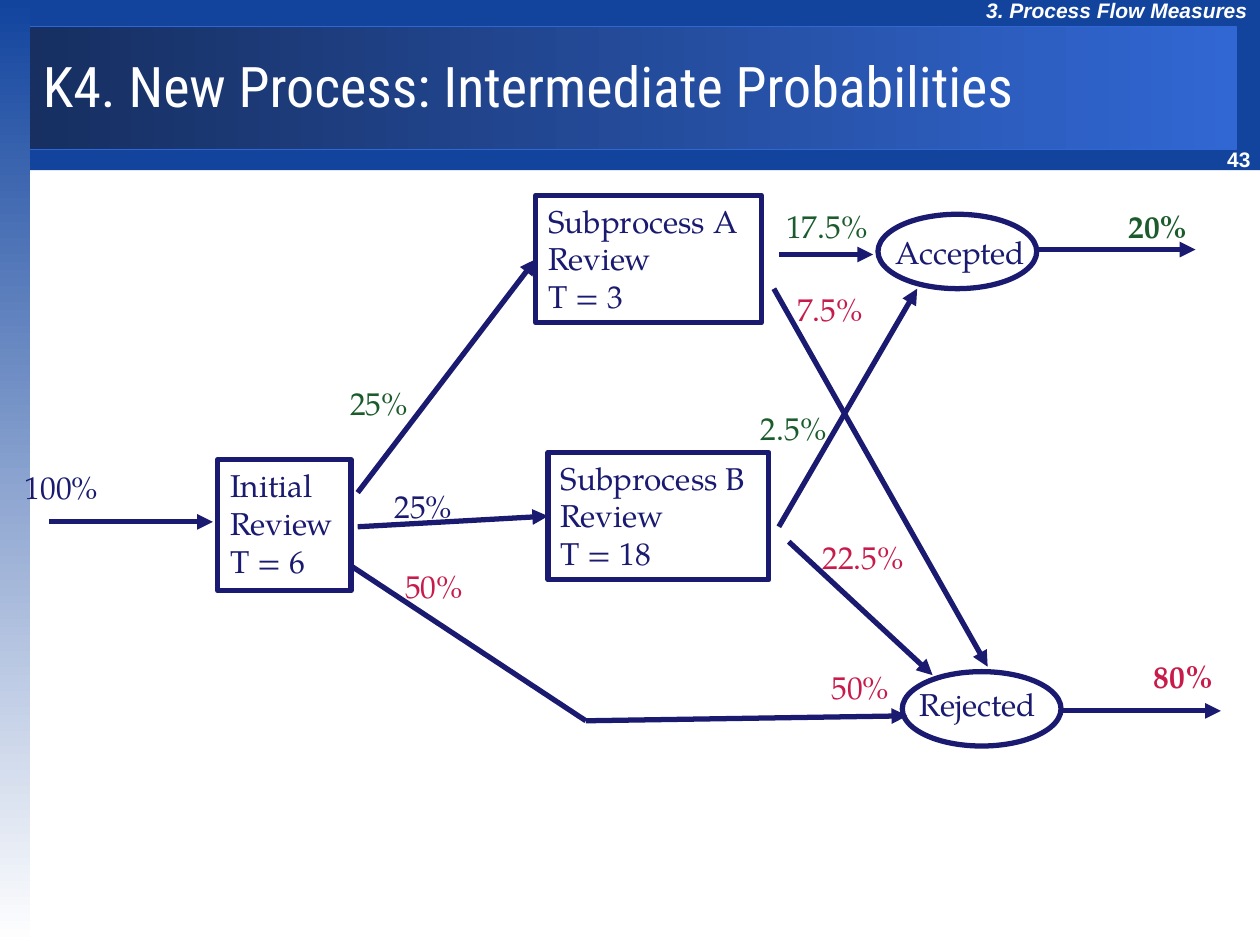
from dataclasses import dataclass

from lxml import etree
from pptx import Presentation
from pptx.dml.color import RGBColor
from pptx.enum.shapes import MSO_CONNECTOR, MSO_SHAPE
from pptx.enum.text import MSO_ANCHOR, MSO_AUTO_SIZE, PP_ALIGN
from pptx.oxml.ns import qn
from pptx.util import Cm, Pt

RECTANGLE, OVAL = MSO_SHAPE.RECTANGLE, MSO_SHAPE.OVAL
STRAIGHT = MSO_CONNECTOR.STRAIGHT
TOP, MIDDLE = MSO_ANCHOR.TOP, MSO_ANCHOR.MIDDLE
LEFT = PP_ALIGN.LEFT
GROW, FIXED = MSO_AUTO_SIZE.SHAPE_TO_FIT_TEXT, MSO_AUTO_SIZE.NONE
LEFT_SIDE = 1


@dataclass(frozen=True)
class Theme:
    header: str = "12449E"
    band_dark: str = "172F61"
    band_light: str = "3167D3"
    white: str = "FFFFFF"
    navy: str = "1A1A70"
    green: str = "1B5B2C"
    red: str = "C71B4C"
    title_font: str = "Roboto Condensed"
    body_font: str = "TeX Gyre Pagella"
    small_font: str = "Arial"
    title_size: int = 32
    body_size: int = 18
    small_size: int = 12
    line_width: int = 3


theme = Theme()


def write(shape, text, font, size, color, bold=False, italic=False):
    frame = shape.text_frame
    frame.text = text
    frame.word_wrap = False
    frame.auto_size = GROW
    frame.vertical_anchor = TOP
    for paragraph in frame.paragraphs:
        paragraph.alignment = LEFT
        for run in paragraph.runs:
            run.font.name = font
            run.font.size = Pt(size)
            run.font.color.rgb = RGBColor.from_string(color)
            run.font.bold = bold
            run.font.italic = italic


def add_plain_shape(kind, box, fill=(), line=None, width=theme.line_width, angle=0):
    shape = slide.shapes.add_shape(kind, *map(Cm, box))
    shape.shadow.inherit = False
    if len(fill) == 2:
        shape.fill.gradient()
        shape.fill.gradient_angle = angle
        for stop, color, position in zip(shape.fill.gradient_stops, fill, (0, 1)):
            stop.color.rgb = RGBColor.from_string(color)
            stop.position = position
    elif fill:
        shape.fill.solid()
        shape.fill.fore_color.rgb = RGBColor.from_string(fill[0])
    else:
        shape.fill.background()
    if line:
        shape.line.color.rgb = RGBColor.from_string(line)
        shape.line.width = Pt(width)
    else:
        shape.line.fill.background()
    return shape


prs = Presentation()
prs.slide_width, prs.slide_height = Cm(25.4), Cm(19.05)
slide = prs.slides.add_slide(prs.slide_layouts[5])

add_plain_shape(RECTANGLE, (0.51, 0, 24.89, 3.43), (theme.header,))
add_plain_shape(RECTANGLE, (0.51, 0.53, 24.41, 2.49),
                (theme.band_dark, theme.band_light), theme.band_light, 0.75)
add_plain_shape(RECTANGLE, (0, 0, 0.61, 19.05), (theme.header, theme.white), angle=270)

for text, box, italic in (
    ("43", (24.49, 2.82, 1.02, 0.76), False),
    ("3. Process Flow Measures", (19.63, -0.18, 5.77, 0.76), True),
):
    note = slide.shapes.add_textbox(*map(Cm, box))
    write(note, text, theme.small_font, theme.small_size, theme.white, True, italic)

title = slide.shapes.title
title.left, title.top, title.width, title.height = map(Cm, (0.61, 0.53, 24.21, 2.39))
write(title, "K4. New Process: Intermediate Probabilities",
      theme.title_font, theme.title_size, theme.white)
title.text_frame.word_wrap = True
title.text_frame.auto_size = FIXED
title.text_frame.vertical_anchor = MIDDLE
title.element.getparent().append(title.element)

steps = {}
for name, duration, box in (
    ("Initial", 6, (4.39, 9.27, 2.69, 2.64)),
    ("Subprocess A", 3, (10.8, 3.94, 4.55, 2.57)),
    ("Subprocess B", 18, (11.05, 9.12, 4.45, 2.57)),
):
    step = add_plain_shape(RECTANGLE, box, line=theme.navy)
    write(step, f"{name}\nReview\nT = {duration}",
          theme.body_font, theme.body_size, theme.navy)
    steps[name] = step

for left, top in ((17.7, 4.32), (18.19, 13.54)):
    add_plain_shape(OVAL, (left, top, 3.2, 1.5), line=theme.navy)

for start, end, target, has_head in (
    ((0.99, 10.52), (4.29, 10.52), None, True),
    ((7.21, 9.93), (10.8, 5.13), "Subprocess A", True),
    ((7.21, 10.62), (11, 10.52), "Subprocess B", True),
    ((7.11, 11.43), (11.81, 14.53), None, False),
    ((11.81, 14.53), (18.29, 14.43), None, True),
    ((15.7, 5.13), (17.6, 5.13), None, True),
    ((15.6, 5.82), (19.91, 13.44), None, True),
    ((15.7, 10.62), (18.49, 5.82), None, True),
    ((15.9, 10.92), (18.8, 13.61), None, True),
    ((20.9, 5.03), (24.1, 5.03), None, True),
    ((21.41, 14.33), (24.61, 14.33), None, True),
):
    flow = slide.shapes.add_connector(STRAIGHT, *map(Cm, start + end))
    flow.line.color.rgb = RGBColor.from_string(theme.navy)
    flow.line.width = Pt(theme.line_width)
    if target:
        flow.end_connect(steps[target], LEFT_SIDE)
    if has_head:
        etree.SubElement(flow.line._get_or_add_ln(), qn("a:tailEnd"), type="triangle")
    etree.SubElement(flow.element.spPr, qn("a:effectLst"))

for text, left, top, width, color, bold in (
    ("Accepted", 17.81, 4.57, 3.15, theme.navy, False),
    ("Rejected", 18.29, 13.69, 2.9, theme.navy, False),
    ("100%", 0.25, 9.32, 2.01, theme.navy, False),
    ("25%", 6.81, 7.62, 1.7, theme.green, False),
    ("25%", 7.7, 9.7, 1.7, theme.navy, False),
    ("50%", 7.92, 11.3, 1.7, theme.red, False),
    ("17.5%", 15.6, 4.04, 2.18, theme.green, False),
    ("7.5%", 15.82, 5.72, 1.85, theme.red, False),
    ("2.5%", 15.09, 8.13, 1.85, theme.green, False),
    ("22.5%", 16.33, 10.72, 2.18, theme.red, False),
    ("50%", 16.51, 13.34, 1.7, theme.red, False),
    ("20%", 22.5, 4.04, 1.78, theme.green, True),
    ("80%", 23.01, 13.13, 1.78, theme.red, True),
):
    label = slide.shapes.add_textbox(Cm(left), Cm(top), Cm(width), Cm(1.02))
    write(label, text, theme.body_font, theme.body_size, color, bold)

prs.save("out.pptx")
